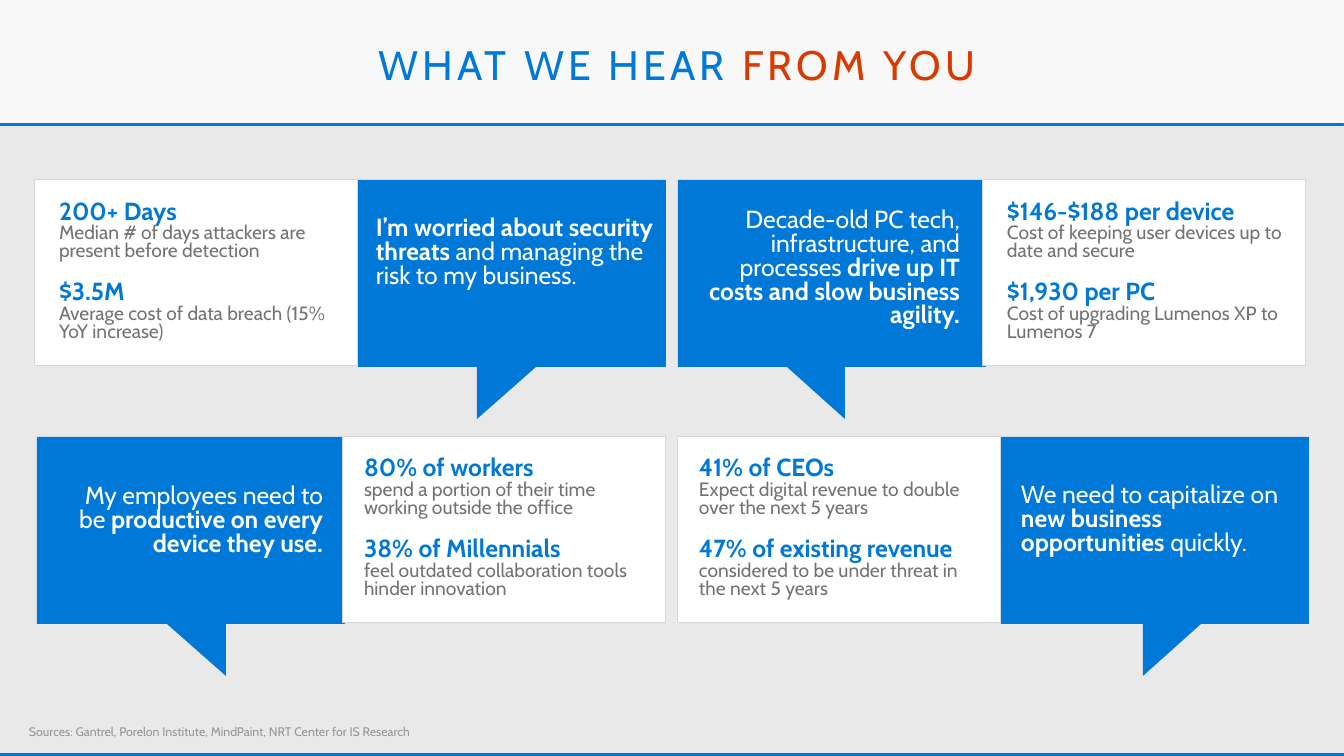
from pptx import Presentation
from pptx.dml.color import RGBColor
from pptx.enum.shapes import MSO_SHAPE
from pptx.enum.text import MSO_ANCHOR, MSO_AUTO_SIZE, PP_ALIGN
from pptx.util import Pt

PX = 9255
RECTANGLE = MSO_SHAPE.RECTANGLE
TOP, MIDDLE = MSO_ANCHOR.TOP, MSO_ANCHOR.MIDDLE
LEFT, CENTER, RIGHT = PP_ALIGN.LEFT, PP_ALIGN.CENTER, PP_ALIGN.RIGHT
NO_AUTOFIT = MSO_AUTO_SIZE.NONE
FONT = "Cabin"
TITLE_ONLY = 5
WIDTH, HEIGHT, HEADER = 1344, 756, 124
CARD_WIDTH, CARD_HEIGHT = 323, 186
BUBBLE_WIDTH, BUBBLE_HEIGHT, TAIL_BOTTOM = 308, 187, 239
STAT_WIDTH, STAT_HEIGHT, STAT_TOP, STAT_STEP = 298, 71, 16, 81
COLORS = {
    "page": "F8F8F8", "body": "E9E9E9", "white": "FFFFFF", "border": "D7D7D7",
    "blue": "0078D7", "orange": "D83B01", "gray": "737373", "source": "969696",
}

BUBBLES = [
    {"at": (358, 180), "tail": (119, 119, 178), "text": (8, 33, 305, 106), "align": LEFT,
     "spans": [("I’m worried about security threats ", True),
               ("and managing the risk to my business.", False)]},
    {"at": (678, 180), "tail": (167, 109, 167), "text": (4, 25, 288, 129), "align": RIGHT,
     "spans": [("Decade-old PC tech, infrastructure, and processes ", False),
               ("drive up IT costs and slow business agility.", True)]},
    {"at": (37, 437), "tail": (189, 130, 189), "text": (8, 44, 288, 82), "align": RIGHT,
     "spans": [("My employees need to be ", False),
               ("productive on every device they use.", True)]},
    {"at": (1001, 437), "tail": (142, 142, 200), "text": (10, 43, 305, 82), "align": LEFT,
     "spans": [("We need to capitalize on ", False),
               ("new business opportunities ", True), ("quickly.", False)]},
]

CARDS = [
    {"at": (35, 180), "indent": 14, "stats": [
        ("200+ Days", "Median # of days attackers are present before detection"),
        ("$3.5M", "Average cost of data breach (15% YoY increase)")]},
    {"at": (983, 180), "indent": 14, "stats": [
        ("$146-$188 per device", "Cost of keeping user devices up to date and secure"),
        ("$1,930 per PC", "Cost of upgrading Lumenos XP to Lumenos 7")]},
    {"at": (343, 437), "indent": 11, "stats": [
        ("80% of workers", "spend a portion of their time working outside the office"),
        ("38% of Millennials", "feel outdated collaboration tools hinder innovation")]},
    {"at": (678, 437), "indent": 11, "stats": [
        ("41% of CEOs", "Expect digital revenue to double over the next 5 years"),
        ("47% of existing revenue", "considered to be under threat in the next 5 years")]},
]


def scaled(box):
    """Turn px lengths into EMU."""
    return [length * PX for length in box]


def color(name):
    """Look up a named colour."""
    return RGBColor.from_string(COLORS[name])


def paint(shape, fill, line=None):
    """Give a shape a flat fill and an optional thin outline."""
    shape.shadow.inherit = False
    shape.fill.solid()
    shape.fill.fore_color.rgb = color(fill)
    if line:
        shape.line.color.rgb = color(line)
        shape.line.width = Pt(0.75)
    else:
        shape.line.fill.background()


def add_rectangle(page, box, fill, line=None):
    """Add a painted rectangle."""
    shape = page.shapes.add_shape(RECTANGLE, *scaled(box))
    paint(shape, fill, line)
    return shape


def set_frame(frame, anchor, horizontal, vertical):
    """Set wrapping, anchor and insets of a text frame."""
    frame.word_wrap = True
    frame.auto_size = NO_AUTOFIT
    frame.vertical_anchor = anchor
    frame.margin_left = frame.margin_right = horizontal * PX
    frame.margin_top = frame.margin_bottom = vertical * PX


def style(para, size, name=None, bold=None, align=LEFT, spacing=0.8):
    """Format a whole paragraph."""
    para.alignment = align
    para.line_spacing = spacing
    para.font.name = FONT
    para.font.size = Pt(size)
    para.font.bold = bold
    if name:
        para.font.color.rgb = color(name)


def add_header(page):
    """Move and format the two-colour title."""
    title = page.shapes.title
    title.left, title.top, title.width, title.height = scaled((333, 28, 688, 78))
    set_frame(title.text_frame, MIDDLE, 16, 10)
    para = title.text_frame.paragraphs[0]
    style(para, 30, align=CENTER, spacing=0.9)
    para.space_after = Pt(6)
    for text, name in (("WHAT WE HEAR ", "blue"), ("FROM YOU", "orange")):
        span = para.add_run()
        span.text = text
        span.font.color.rgb = color(name)
        span._r.get_or_add_rPr().set("spc", "300")


def add_sources(page, box):
    """Add the source line."""
    frame = page.shapes.add_textbox(*scaled(box)).text_frame
    set_frame(frame, TOP, 0, 0)
    para = frame.paragraphs[0]
    para.text = "Sources: Gantrel, Porelon Institute, MindPaint, NRT Center for IS Research"
    style(para, 9, "source", spacing=0.9)


def add_bubble(page, at, tail, text, align, spans):
    """Add a speech bubble with its quote."""
    left, top = at
    tip, tail_left, tail_right = tail
    outline = [(0, 0), (BUBBLE_WIDTH, 0), (BUBBLE_WIDTH, BUBBLE_HEIGHT),
               (tail_right, BUBBLE_HEIGHT), (tip, TAIL_BOTTOM),
               (tail_left, BUBBLE_HEIGHT), (0, BUBBLE_HEIGHT)]
    points = [(left + x, top + y) for x, y in outline]
    builder = page.shapes.build_freeform(*points[0], scale=PX)
    builder.add_line_segments(points[1:], close=True)
    paint(builder.convert_to_shape(), "blue")

    x, y, width, height = text
    quote = page.shapes.add_textbox(*scaled((left + x, top + y, width, height)))
    set_frame(quote.text_frame, TOP, 10, 5)
    para = quote.text_frame.paragraphs[0]
    style(para, 18, "white", align=align)
    for words, bold in spans:
        span = para.add_run()
        span.text = words
        span.font.bold = bold


def add_card(page, at, indent, stats):
    """Add a white card with its stacked statistics."""
    left, top = at
    add_rectangle(page, (left, top, CARD_WIDTH, CARD_HEIGHT), "white", "border")
    for row, (figure, meaning) in enumerate(stats):
        box = (left + indent, top + STAT_TOP + row * STAT_STEP, STAT_WIDTH, STAT_HEIGHT)
        frame = add_rectangle(page, box, "white").text_frame
        set_frame(frame, TOP, 10, 5)
        heading, detail = frame.paragraphs[0], frame.add_paragraph()
        heading.text, detail.text = figure, meaning
        style(heading, 18, "blue", True)
        style(detail, 14, "gray", False)


def main():
    """Build and save the slide."""
    deck = Presentation()
    deck.slide_width, deck.slide_height = scaled((WIDTH, HEIGHT))
    page = deck.slides.add_slide(deck.slide_layouts[TITLE_ONLY])
    page.background.fill.solid()
    page.background.fill.fore_color.rgb = color("page")
    add_rectangle(page, (0, HEADER, WIDTH, HEIGHT - HEADER), "body")
    add_header(page)
    add_sources(page, (29, 726, 1077, 14))
    for bubble in BUBBLES:
        add_bubble(page, **bubble)
    for card in CARDS:
        add_card(page, **card)
    for top in (HEADER, HEIGHT - 2):
        add_rectangle(page, (0, top, WIDTH, 2), "blue", "blue")
    deck.save("out.pptx")


if __name__ == "__main__":
    main()
